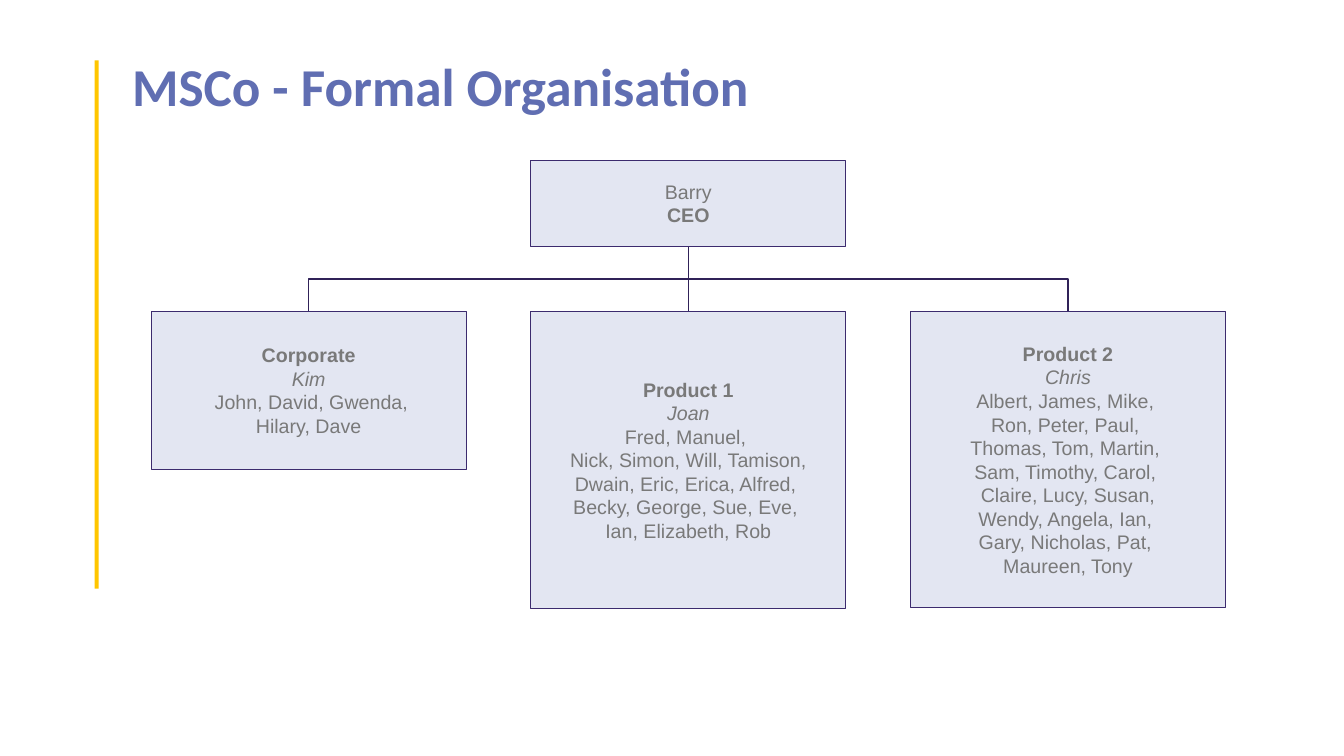
from pptx import Presentation
from pptx.util import Pt
from pptx.dml.color import RGBColor
from pptx.enum import shapes, text
from pptx.oxml.ns import qn
from lxml import etree

GOLD = RGBColor(0xFF, 0xC6, 0x00)
BLUE = RGBColor(0x60, 0x6E, 0xB2)
PALE = RGBColor(0xE3, 0xE6, 0xF2)
EDGE = RGBColor(0x3C, 0x2B, 0x6E)
LINK = RGBColor(0x30, 0x22, 0x58)
GREY = RGBColor(0x79, 0x79, 0x79)

WIDE, STEP, LEFT = 225, 271.2, 108
HEAD, BASE, RAIL, TOP = 114.5, 175.7, 199.2, 222.6
MID = LEFT + STEP + WIDE / 2

deck = Presentation()
deck.slide_width, deck.slide_height = Pt(960), Pt(540)
slide = deck.slides.add_slide(deck.slide_layouts[5])


def add_box(x, y, w, h, fill):
    box = slide.shapes.add_shape(shapes.MSO_SHAPE.RECTANGLE, Pt(x), Pt(y), Pt(w), Pt(h))
    box.shadow.inherit = False
    box.fill.solid()
    box.fill.fore_color.rgb = fill
    return box


def add_run(para, words, bold=False, slant=False):
    run = para.add_run()
    run.text = words
    font = run.font
    font.name, font.size = "Arial", Pt(14)
    font.bold, font.italic = bold, slant
    font.color.rgb = GREY


bar = add_box(67.7, 43.2, 2.9, 377.3, GOLD)
bar.line.fill.background()

title = slide.shapes.title
title.left, title.top, title.width, title.height = Pt(94.3), Pt(43.2), Pt(793.4), Pt(79.2)
frame = title.text_frame
frame.margin_left = frame.margin_right = frame.margin_top = frame.margin_bottom = 0
frame.vertical_anchor = text.MSO_ANCHOR.TOP
frame.word_wrap = True
frame.auto_size = text.MSO_AUTO_SIZE.NONE
para = frame.paragraphs[0]
para.alignment = text.PP_ALIGN.LEFT
para.line_spacing = 0.9
run = para.add_run()
run.text = "MSCo - Formal Organisation"
run.font.name, run.font.size, run.font.bold = "Calibri", Pt(38), True
run.font.color.rgb = BLUE

for side in (1, -1):
    end = MID + side * STEP
    path = slide.shapes.build_freeform(Pt(MID), Pt(BASE))
    path.add_line_segments(
        [(Pt(MID), Pt(RAIL)), (Pt(end), Pt(RAIL)), (Pt(end), Pt(TOP))], close=False)
    elbow = path.convert_to_shape()
    elbow.shadow.inherit = False
    elbow.fill.background()
    elbow.line.color.rgb = LINK
    elbow.line.width = Pt(1)

stem = slide.shapes.add_connector(
    shapes.MSO_CONNECTOR.STRAIGHT, Pt(MID), Pt(BASE), Pt(MID), Pt(TOP))
stem.line.color.rgb = LINK
stem.line.width = Pt(1)
etree.SubElement(stem._element.spPr, qn("a:effectLst"))

units = [
    (1, HEAD, BASE - HEAD, "Barry", "CEO", []),
    (0, TOP, 112.4, "Corporate", "Kim", [" John, David, Gwenda,", "Hilary, Dave"]),
    (1, TOP, 212, "Product 1", "Joan", [
        "Fred, Manuel, ", "Nick, Simon, Will, Tamison,", "Dwain, Eric, Erica, Alfred, ",
        "Becky, George, Sue, Eve, ", "Ian, Elizabeth, Rob"]),
    (2, TOP, 211.3, "Product 2", "Chris", [
        "Albert, James, Mike, ", "Ron, Peter, Paul, ", "Thomas, Tom, Martin, ",
        "Sam, Timothy, Carol, ", "Claire, Lucy, Susan,", "Wendy, Angela, Ian, ",
        "Gary, Nicholas, Pat, ", "Maureen, Tony"]),
]

for col, y, high, name, lead, staff in units:
    box = add_box(LEFT + col * STEP, y, WIDE, high, PALE)
    box.line.color.rgb = EDGE
    box.line.width = Pt(0.5)
    frame = box.text_frame
    frame.margin_left = frame.margin_right = frame.margin_top = frame.margin_bottom = Pt(0.7)
    frame.vertical_anchor = text.MSO_ANCHOR.MIDDLE
    frame.word_wrap = True
    first, second = frame.paragraphs[0], frame.add_paragraph()
    first.alignment = second.alignment = text.PP_ALIGN.CENTER
    team = bool(staff)
    add_run(first, name, bold=team)
    add_run(second, lead, bold=not team, slant=team)
    for line in staff:
        second.add_line_break()
        add_run(second, line)

deck.save("out.pptx")
